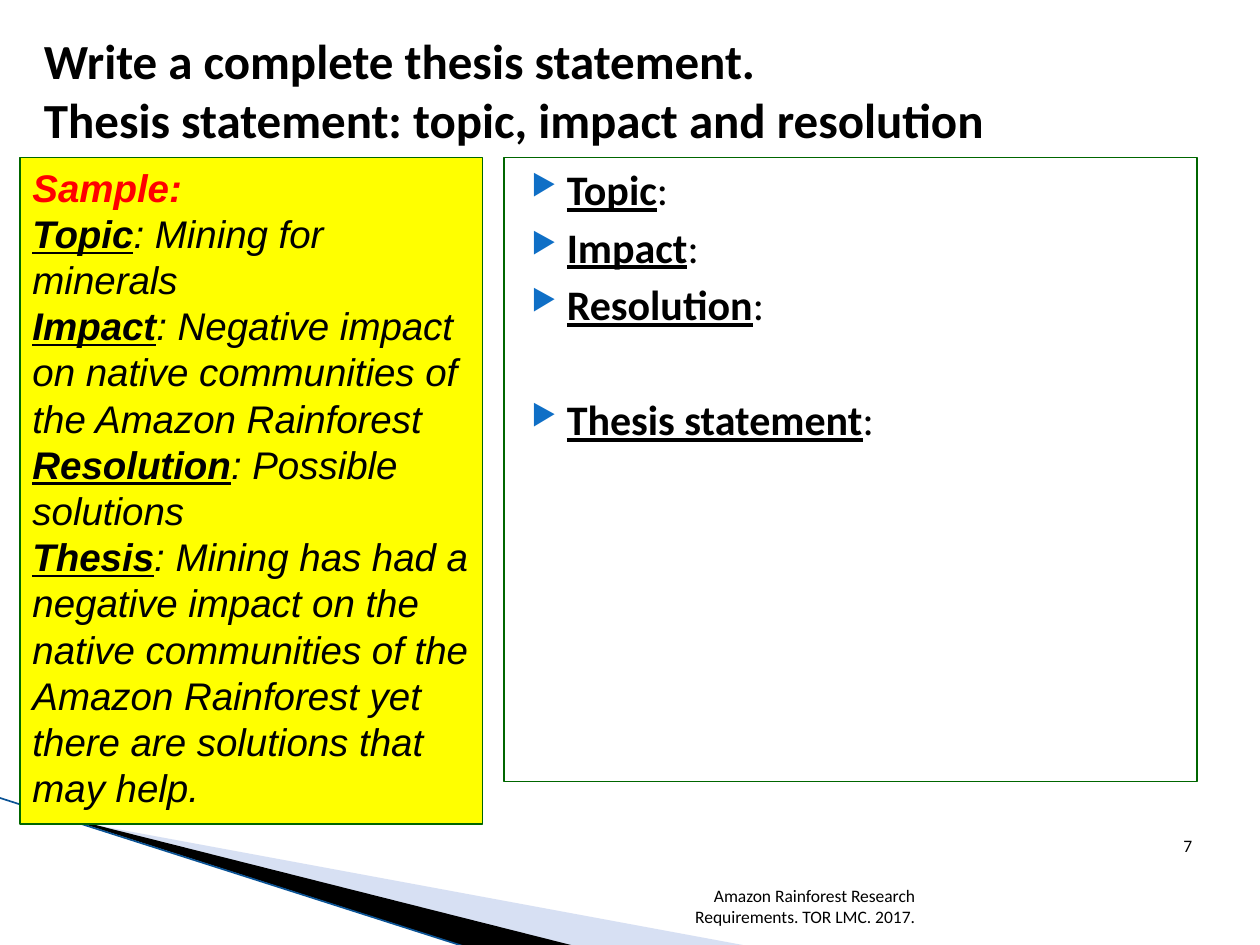
from dataclasses import dataclass

from lxml.etree import SubElement
from pptx import Presentation
from pptx.dml.color import RGBColor
from pptx.enum.shapes import MSO_CONNECTOR as Connector, MSO_SHAPE as Shape
from pptx.enum.text import MSO_ANCHOR as Anchor, PP_ALIGN as Align
from pptx.oxml.ns import qn
from pptx.util import Inches, Pt


@dataclass(frozen=True)
class Theme:
    """Colours, fonts and type sizes of the slide."""
    black: str = "000000"
    red: str = "FF0000"
    yellow: str = "FFFF00"
    border: str = "006600"
    bullet: str = "0F6FC6"
    wedge: str = "9DB2E1"
    edge: str = "0B5395"
    body_font: str = "Calibri"
    sample_font: str = "Arial"
    bullet_font: str = "OpenSymbol"
    title_size: int = 28
    prompt_size: int = 24
    sample_size: int = 22
    small_size: int = 10


THEME = Theme()
PROMPTS = ["Topic", "Impact", "Resolution", "Thesis statement"]
SAMPLE = [
    ("Topic", "Mining for minerals"),
    ("Impact", "Negative impact on native communities of the Amazon Rainforest"),
    ("Resolution", "Possible solutions"),
    ("Thesis", "Mining has had a negative impact on the native communities of the "
               "Amazon Rainforest yet there are solutions that may help."),
]


def color(value):
    """Turn a hex value into a colour."""
    return RGBColor.from_string(value)


def style(paragraph, size, font=THEME.body_font, tint=THEME.black, bold=None, italic=None):
    """Set the font that all runs of a paragraph share."""
    paragraph.font.size = Pt(size)
    paragraph.font.name = font
    paragraph.font.color.rgb = color(tint)
    paragraph.font.bold = bold
    paragraph.font.italic = italic


def add_text(slide, box, text, size, anchor=Anchor.BOTTOM, align=Align.RIGHT, bold=None):
    """Add a wrapped text box with one paragraph."""
    frame = slide.shapes.add_textbox(*map(Inches, box)).text_frame
    frame.word_wrap = True
    frame.vertical_anchor = anchor
    paragraph = frame.paragraphs[0]
    paragraph.text = text
    paragraph.alignment = align
    style(paragraph, size, bold=bold)


def add_panel(slide, box, fill=None):
    """Add a bordered rectangle and return its text frame."""
    panel = slide.shapes.add_shape(Shape.RECTANGLE, *map(Inches, box))
    panel.shadow.inherit = False
    if fill:
        panel.fill.solid()
        panel.fill.fore_color.rgb = color(fill)
    else:
        panel.fill.background()
    panel.line.color.rgb = color(THEME.border)
    panel.line.width = Pt(0.75)
    frame = panel.text_frame
    frame.word_wrap = True
    frame.vertical_anchor = Anchor.TOP
    return frame


def add_label(paragraph, label, rest):
    """Write an underlined bold label followed by plain text."""
    paragraph.alignment = Align.LEFT
    run = paragraph.add_run()
    run.text = label
    run.font.bold = run.font.underline = True
    paragraph.add_run().text = rest


def add_bullet(paragraph):
    """Give a paragraph a hanging triangle bullet."""
    properties = paragraph._p.get_or_add_pPr()
    properties.set("marL", str(Inches(0.4)))
    properties.set("indent", str(Inches(-0.28)))
    tint = SubElement(properties, qn("a:buClr"))
    SubElement(tint, qn("a:srgbClr"), val=THEME.bullet)
    SubElement(properties, qn("a:buSzPct"), val="68000")
    SubElement(properties, qn("a:buFont"), typeface=THEME.bullet_font)
    SubElement(properties, qn("a:buChar"), char="▶")


def add_wedge(slide, points, fill, opacity=None):
    """Add a borderless filled polygon."""
    corners = [(Inches(x), Inches(y)) for x, y in points]
    builder = slide.shapes.build_freeform(*corners[0])
    builder.add_line_segments(corners[1:], close=True)
    wedge = builder.convert_to_shape()
    wedge.shadow.inherit = False
    wedge.fill.solid()
    wedge.fill.fore_color.rgb = color(fill)
    wedge.line.fill.background()
    if opacity:
        tint = wedge._element.spPr.find(".//" + qn("a:srgbClr"))
        SubElement(tint, qn("a:alpha"), val=str(opacity * 1000))


def add_edge(slide, start, end):
    """Add the thin line along the corner decoration."""
    edge = slide.shapes.add_connector(Connector.STRAIGHT, *map(Inches, start + end))
    edge.line.color.rgb = color(THEME.edge)
    edge.line.width = Pt(0.95)
    SubElement(edge._element.spPr, qn("a:effectLst"))


def add_prompts(slide):
    """Add the panel of headings to fill in."""
    frame = add_panel(slide, (4, 1.25, 5.5, 4.95))
    for index, prompt in enumerate(PROMPTS):
        paragraph = frame.add_paragraph() if index else frame.paragraphs[0]
        add_label(paragraph, prompt, ":")
        if index:
            paragraph.space_before = Pt(37 if prompt == PROMPTS[-1] else 4)
        add_bullet(paragraph)
        style(paragraph, THEME.prompt_size)


def add_sample(slide):
    """Add the yellow panel with the worked sample."""
    frame = add_panel(slide, (0.16, 1.25, 3.67, 5.29), THEME.yellow)
    heading = frame.paragraphs[0]
    heading.text = "Sample:"
    heading.alignment = Align.LEFT
    style(heading, THEME.sample_size, THEME.sample_font, THEME.red, bold=True, italic=True)
    for label, answer in SAMPLE:
        paragraph = frame.add_paragraph()
        add_label(paragraph, label, f": {answer}")
        style(paragraph, THEME.sample_size, THEME.sample_font, italic=True)


def main():
    """Build the slide and save it."""
    presentation = Presentation()
    presentation.slide_width, presentation.slide_height = Inches(10), Inches(7.5)
    slide = presentation.slides.add_slide(presentation.slide_layouts[6])
    add_wedge(slide, [(0.55, 6.51), (5.95, 7.51), (4.56, 7.51), (0.55, 6.5)], THEME.wedge, 40)
    add_wedge(slide, [(0.53, 6.49), (4.57, 7.51), (3.72, 7.52), (0.54, 6.5)], THEME.black)
    add_edge(slide, (-0.01, 6.33), (3.71, 7.52))
    add_text(slide, (0.25, 0.17, 9.42, 1.08),
             "Write a complete thesis statement.\vThesis statement: topic, impact and resolution",
             THEME.title_size, Anchor.MIDDLE, Align.LEFT, bold=True)
    add_prompts(slide)
    add_text(slide, (8.89, 6.27, 0.67, 0.57), "7", THEME.small_size)
    add_sample(slide)
    add_text(slide, (4.79, 7.01, 2.57, 0.4),
             "Amazon Rainforest Research Requirements. TOR LMC. 2017.", THEME.small_size)
    presentation.save("out.pptx")


if __name__ == "__main__":
    main()
